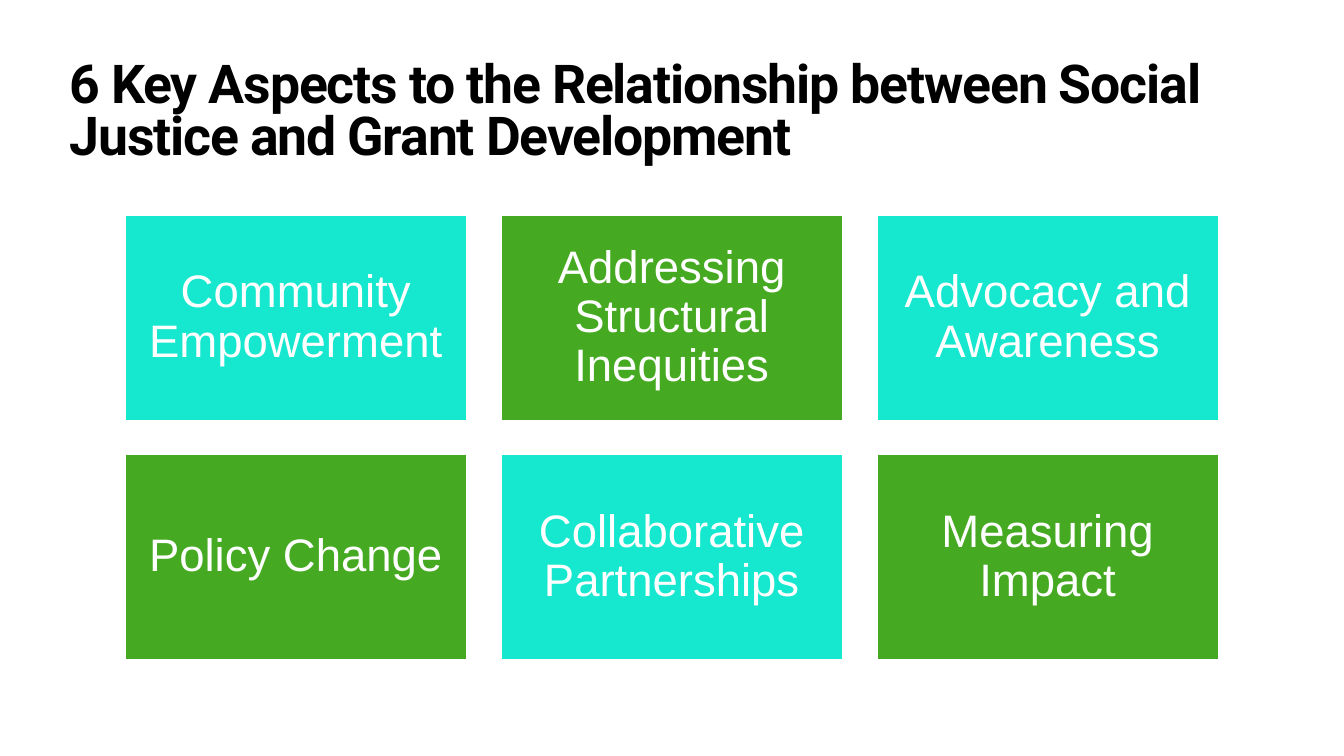
import pptx
import pptx.dml.color
import pptx.enum.shapes
import pptx.enum.text
import pptx.util

RGBColor = pptx.dml.color.RGBColor
Inches = pptx.util.Inches
Pt = pptx.util.Pt

BLACK = RGBColor(0x00, 0x00, 0x00)
WHITE = RGBColor(0xFF, 0xFF, 0xFF)
TEAL = RGBColor(0x16, 0xE7, 0xCF)
GREEN = RGBColor(0x45, 0xAA, 0x21)

WIDTH, HEIGHT = 26.67, 15
COLS = 3
LEFT, TOP = 2.48, 4.27
CARD_W, CARD_H = 6.78, 4.07
GAP = 0.68

TITLE = ("6 Key Aspects to the Relationship between Social Justice "
         "and Grant Development")
ASPECTS = [
    "Community Empowerment",
    "Addressing Structural Inequities",
    "Advocacy and Awareness",
    "Policy Change",
    "Collaborative Partnerships",
    "Measuring Impact",
]


class Deck:
    """Holds the style and the current slide."""

    title_font, card_font = "Roboto", "Arial"
    title_size, card_size = 76.5, 65

    def __init__(self):
        self.file = pptx.Presentation()
        self.file.slide_width = Inches(WIDTH)
        self.file.slide_height = Inches(HEIGHT)
        self.slide = self.file.slides.add_slide(self.file.slide_layouts[6])

    def label(self, shape, text, face, size, color, inset, spacing):
        """Fill a shape with one wrapped paragraph; return paragraph and run."""
        frame = shape.text_frame
        frame.word_wrap = True
        frame.margin_left = frame.margin_right = Inches(inset)
        frame.margin_top = frame.margin_bottom = Inches(inset)
        frame.text = text
        para = frame.paragraphs[0]
        para.line_spacing = spacing
        run = para.runs[0]
        run.font.name = face
        run.font.size = Pt(size)
        run.font.color.rgb = color
        return para, run

    def title(self, text):
        box = self.slide.shapes.add_textbox(
            Inches(1.32), Inches(1.18), Inches(24.03), Inches(1.57))
        para, run = self.label(box, text, self.title_font, self.title_size,
                               BLACK, 0.06, 0.8)
        run.font.bold = True
        run._r.get_or_add_rPr().set("spc", "-170")

    def card(self, col, row, text, color):
        card = self.slide.shapes.add_shape(
            pptx.enum.shapes.MSO_SHAPE.RECTANGLE,
            Inches(LEFT + col * (CARD_W + GAP)),
            Inches(TOP + row * (CARD_H + GAP)),
            Inches(CARD_W), Inches(CARD_H))
        card.shadow.inherit = False
        card.fill.solid()
        card.fill.fore_color.rgb = color
        card.line.color.rgb = WHITE
        card.line.width = Pt(2)
        card.text_frame.vertical_anchor = pptx.enum.text.MSO_ANCHOR.MIDDLE
        para, run = self.label(card, text, self.card_font, self.card_size,
                               WHITE, 0.27, 0.9)
        para.alignment = pptx.enum.text.PP_ALIGN.CENTER


def main():
    deck = Deck()
    deck.title(TITLE)
    for index, text in enumerate(ASPECTS):
        row, col = divmod(index, COLS)
        deck.card(col, row, text, GREEN if index % 2 else TEAL)
    deck.file.save("out.pptx")


if __name__ == "__main__":
    main()
